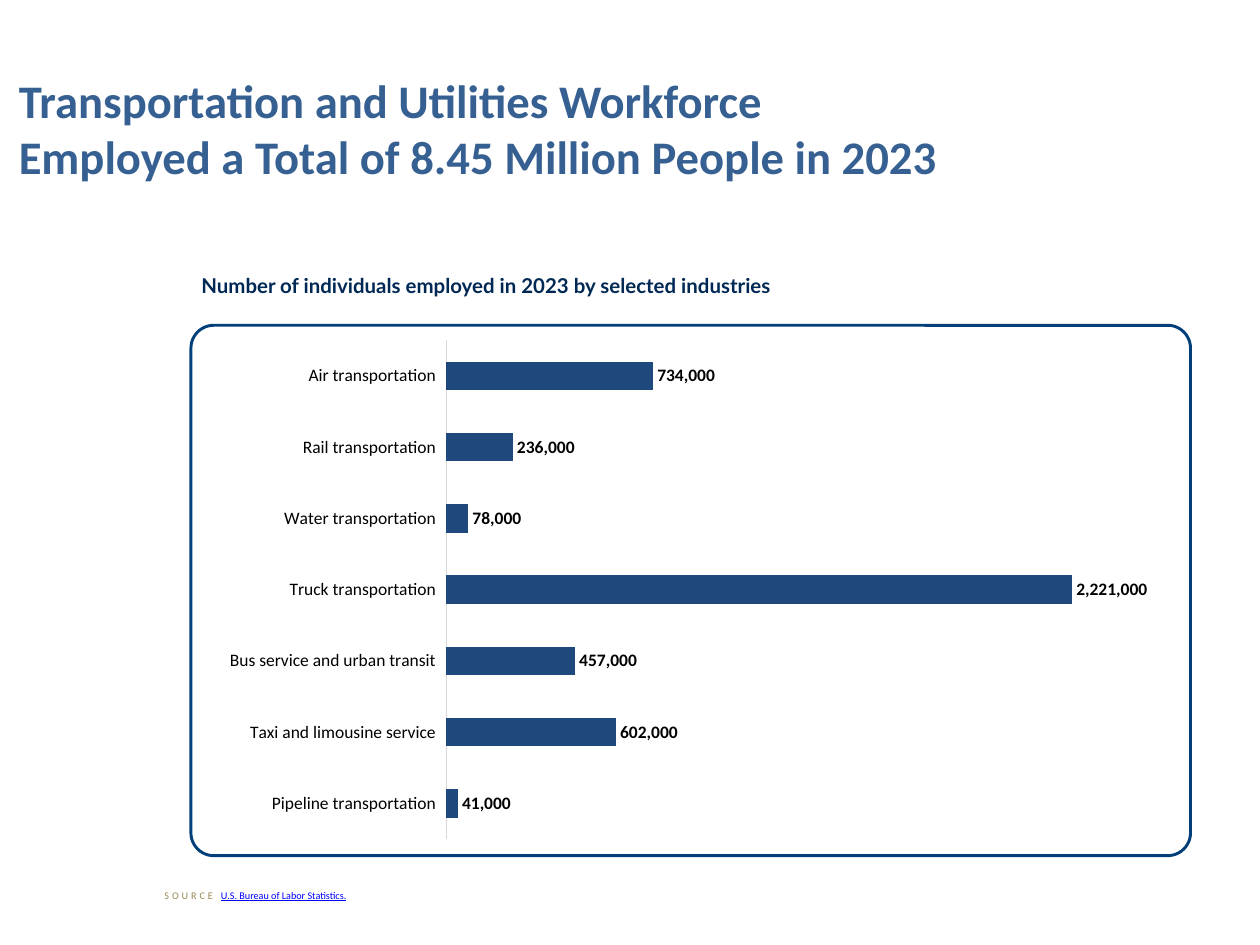
from lxml.etree import SubElement
from pptx import Presentation
from pptx.chart.data import CategoryChartData
from pptx.dml.color import RGBColor
from pptx.enum.chart import XL_CHART_TYPE as ChartType, XL_LABEL_POSITION as LabelPosition
from pptx.enum.chart import XL_TICK_LABEL_POSITION as TickLabels, XL_TICK_MARK as TickMark
from pptx.enum.shapes import MSO_SHAPE as Shape
from pptx.enum.text import MSO_ANCHOR as Anchor, PP_ALIGN as Align
from pptx.oxml.ns import qn
from pptx.util import Cm, Pt

COLORS = {
    "title": "376092",
    "heading": "002855",
    "frame": "003F7A",
    "bar": "1F497D",
    "axis": "D9D9D9",
    "text": "000000",
    "source": "948A54",
    "reference": "0000FF",
}
EMPLOYED = {
    "Air transportation": 734000,
    "Rail transportation": 236000,
    "Water transportation": 78000,
    "Truck transportation": 2221000,
    "Bus service and urban transit": 457000,
    "Taxi and limousine service": 602000,
    "Pipeline transportation": 41000,
}
PLOT_AREA = {"x": 0.268, "y": 0.118, "w": 0.661, "h": 0.847}


def color(name):
    return RGBColor.from_string(COLORS[name])


class SlideBuilder:
    def __init__(self, deck, font="Calibri"):
        self.font = font
        self.slide = deck.slides.add_slide(deck.slide_layouts[5])

    def style(self, font, color_name, size, **formats):
        values = {"name": self.font, "size": Pt(size), **formats}
        for key, value in values.items():
            setattr(font, key, value)
        font.color.rgb = color(color_name)

    def place(self, shape, area):
        for key, value in zip(("left", "top", "width", "height"), area):
            setattr(shape, key, Cm(value))

    def span(self, para, text, color_name, size, spacing=0, **formats):
        """Add a run; spacing is the letter spacing in points."""
        span = para.add_run()
        span.text = text
        self.style(span.font, color_name, size, **formats)
        if spacing:
            span.font._element.set("spc", str(spacing * 100))

    def title(self, text, area):
        box = self.slide.shapes.title
        self.place(box, area)
        frame = box.text_frame
        frame.word_wrap = True
        frame.vertical_anchor = Anchor.MIDDLE
        para = frame.paragraphs[0]
        para.alignment = Align.LEFT
        self.span(para, text, "title", 32, bold=True)

    def text(self, area, line_spacing=1.0):
        """Add a text box and return its first paragraph."""
        box = self.slide.shapes.add_textbox(*map(Cm, area))
        box.text_frame.word_wrap = True
        para = box.text_frame.paragraphs[0]
        para.line_spacing = line_spacing
        return para

    def frame(self, area):
        box = self.slide.shapes.add_shape(Shape.ROUNDED_RECTANGLE, *map(Cm, area))
        box.adjustments[0] = 0.043
        box.shadow.inherit = False
        box.fill.background()
        box.line.color.rgb = color("frame")
        box.line.width = Pt(2)

    def bar_chart(self, values, area):
        data = CategoryChartData(number_format="#,##0")
        data.categories = list(values)
        data.add_series("Series 1", list(values.values()))
        chart = self.slide.shapes.add_chart(
            ChartType.BAR_CLUSTERED, *map(Cm, area), data).chart
        chart.has_legend = chart.has_title = False
        self.style(chart.font, "text", 10)
        self.category_axis(chart.category_axis)
        axis = chart.value_axis
        formats = {"minimum_scale": 0, "maximum_scale": 2500000,
                   "has_major_gridlines": False, "visible": False}
        for key, value in formats.items():
            setattr(axis, key, value)
        plot = chart.plots[0]
        plot.gap_width = 150
        plot.vary_by_categories = False
        series = plot.series[0]
        series.format.fill.solid()
        series.format.fill.fore_color.rgb = color("bar")
        labels = series.data_labels
        formats = {"show_value": True, "number_format": "#,##0",
                   "number_format_is_linked": False,
                   "position": LabelPosition.OUTSIDE_END}
        for key, value in formats.items():
            setattr(labels, key, value)
        self.style(labels.font, "text", 12, bold=True)
        self.plot_layout(chart)

    def category_axis(self, axis):
        formats = {"reverse_order": True, "major_tick_mark": TickMark.NONE,
                   "minor_tick_mark": TickMark.NONE,
                   "tick_label_position": TickLabels.LOW}
        for key, value in formats.items():
            setattr(axis, key, value)
        self.style(axis.tick_labels.font, "text", 12)
        axis.format.line.color.rgb = color("axis")
        axis.format.line.width = Pt(0.75)

    def plot_layout(self, chart):
        """Fix the inner plot area as fractions of the chart."""
        plot_area = chart._chartSpace.chart.plotArea
        layout = plot_area.find(qn("c:layout"))
        if layout is None:
            layout = SubElement(plot_area, qn("c:layout"))
            plot_area.insert(0, layout)
        manual = SubElement(layout, qn("c:manualLayout"))
        settings = {"layoutTarget": "inner", "xMode": "edge", "yMode": "edge", **PLOT_AREA}
        for key, value in settings.items():
            SubElement(manual, qn(f"c:{key}")).set("val", str(value))


def main():
    deck = Presentation()
    deck.slide_width, deck.slide_height = Cm(30.48), Cm(22.86)
    page = SlideBuilder(deck)
    page.title("Transportation and Utilities Workforce Employed a Total of "
               "8.45 Million People in 2023", (0.2, 0.81, 22.86, 4.57))
    page.bar_chart(EMPLOYED, (3.89, 6.55, 25.78, 14.25))
    heading = page.text((4.62, 6.55, 20.4, 1.17), line_spacing=0.9)
    page.span(heading, "Number of individuals employed in 2023 by selected industries",
              "heading", 14, name="Lato", bold=True)
    page.frame((4.62, 7.87, 24.18, 12.83))
    source = page.text((3.73, 21.39, 21.31, 0.56))
    page.span(source, "SOURCE ", "source", 7, spacing=2)
    page.span(source, "U.S. Bureau of Labor Statistics.", "reference", 7, underline=True)
    deck.save("out.pptx")


if __name__ == "__main__":
    main()
